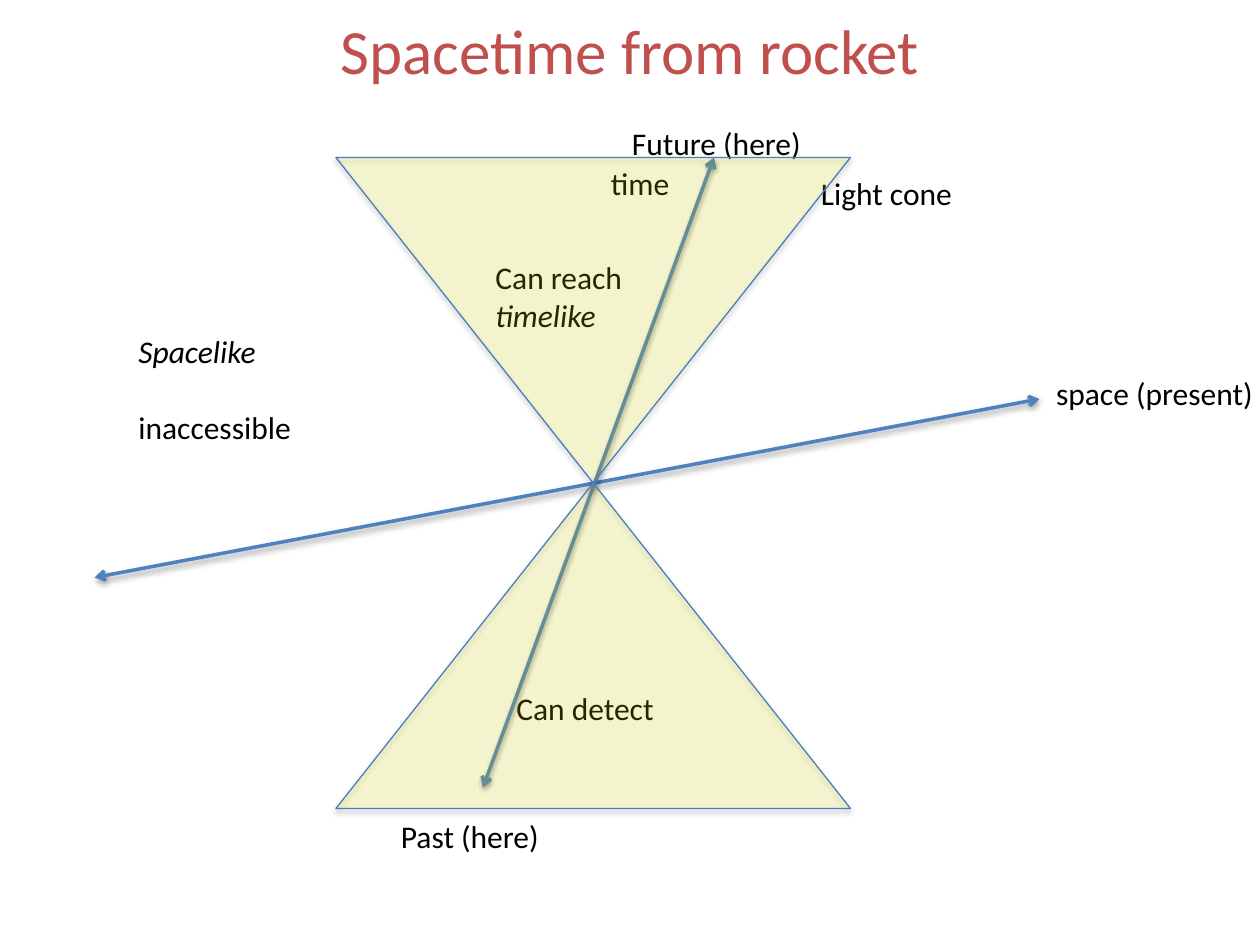
import pptx
import pptx.dml.color
import pptx.enum.shapes
import pptx.enum.text
import pptx.oxml
import pptx.oxml.ns
import pptx.util
import lxml.etree

COLUMNS, ROWS = 120, 90
RED, BLUE, EDGE, YELLOW, BLACK = "C0504D", "4F81BD", "4B7EBC", "FFFF00", "000000"


def color(value):
    return pptx.dml.color.RGBColor.from_string(value)


class Diagram:
    """Draws on one slide; all lengths are grid columns and rows."""

    font = "Calibri"

    def __init__(self, prs):
        self.cell_w = prs.slide_width / COLUMNS
        self.cell_h = prs.slide_height / ROWS
        self.s = prs.slides.add_slide(prs.slide_layouts[6])

    def place(self, *lengths):
        """Turn alternating columns and rows into slide lengths."""
        cells = (self.cell_w, self.cell_h)
        return [round(n * cells[i % 2]) for i, n in enumerate(lengths)]

    def shadow(self, sp, opacity, distance):
        xml = (
            f'<a:effectLst {pptx.oxml.ns.nsdecls("a")}>'
            f'<a:outerShdw blurRad="{pptx.util.Pt(3.1)}" dist="{pptx.util.Pt(distance)}"'
            ' dir="5400000" rotWithShape="0">'
            f'<a:srgbClr val="{BLACK}"><a:alpha val="{opacity * 1000}"/></a:srgbClr>'
            '</a:outerShdw></a:effectLst>'
        )
        sp._element.spPr.append(pptx.oxml.parse_xml(xml))

    def text(self, box, lines, size=18, fill=BLACK, align="LEFT", anchor="TOP", gap=0):
        """Add (text, italic) lines, with gap points between them."""
        tf = self.s.shapes.add_textbox(*self.place(*box)).text_frame
        tf.word_wrap = True
        tf.margin_right = 0 if align == "LEFT" else tf.margin_left
        tf.vertical_anchor = pptx.enum.text.MSO_ANCHOR[anchor]
        for i, (words, italic) in enumerate(lines):
            p = tf.add_paragraph() if i else tf.paragraphs[0]
            p.alignment = pptx.enum.text.PP_ALIGN[align]
            p.space_before = pptx.util.Pt(gap if i else 0)
            r = p.add_run()
            r.text = words
            r.font.name = self.font
            r.font.size = pptx.util.Pt(size)
            r.font.italic = italic
            r.font.color.rgb = color(fill)

    def axis(self, *ends):
        """Add a line with an arrowhead at both ends."""
        sp = self.s.shapes.add_connector(
            pptx.enum.shapes.MSO_CONNECTOR.STRAIGHT, *self.place(*ends))
        sp.line.color.rgb = color(BLUE)
        sp.line.width = pptx.util.Pt(2)
        ln = sp.line._get_or_add_ln()
        for end in ("a:headEnd", "a:tailEnd"):
            lxml.etree.SubElement(ln, pptx.oxml.ns.qn(end), type="arrow")
        self.shadow(sp, 38, 1.6)

    def cones(self, box, opacity):
        sp = self.s.shapes.add_shape(
            pptx.enum.shapes.MSO_SHAPE.FLOWCHART_COLLATE, *self.place(*box))
        sp.fill.solid()
        sp.fill.fore_color.rgb = color(YELLOW)
        tint = sp._element.spPr.find(".//" + pptx.oxml.ns.qn("a:srgbClr"))
        lxml.etree.SubElement(tint, pptx.oxml.ns.qn("a:alpha"), val=str(opacity * 1000))
        sp.line.color.rgb = color(EDGE)
        sp.line.width = pptx.util.Pt(0.75)
        self.shadow(sp, 35, 1.8)


def main():
    prs = pptx.Presentation()
    prs.slide_width = pptx.util.Inches(10)
    prs.slide_height = pptx.util.Inches(7.5)

    d = Diagram(prs)
    d.text((6, 1, 108, 7.4), [("Spacetime from rocket", False)],
           size=36, fill=RED, align="CENTER", anchor="MIDDLE")
    d.axis(9, 55, 99, 38)
    d.axis(68, 15, 46, 75)

    labels = [
        (99.4, 35, 20.6, "space (present)"),
        (59, 11.2, 27, "Future (here)"),
        (57, 15, 25, "time"),
        (37, 77.2, 16, "Past (here)"),
        (77, 16, 20, "Light cone"),
        (48, 65, 17, "Can detect"),
    ]
    for left, top, width, words in labels:
        d.text((left, top, width, 4.8), [(words, False)])
    d.text((46, 24, 20, 8.5), [("Can reach", False), ("timelike", True)])
    d.text((12, 31, 21, 12.1), [("Spacelike", True), ("inaccessible", False)], gap=22)

    d.cones((32, 15, 49, 62), opacity=15)
    prs.save("out.pptx")


if __name__ == "__main__":
    main()
